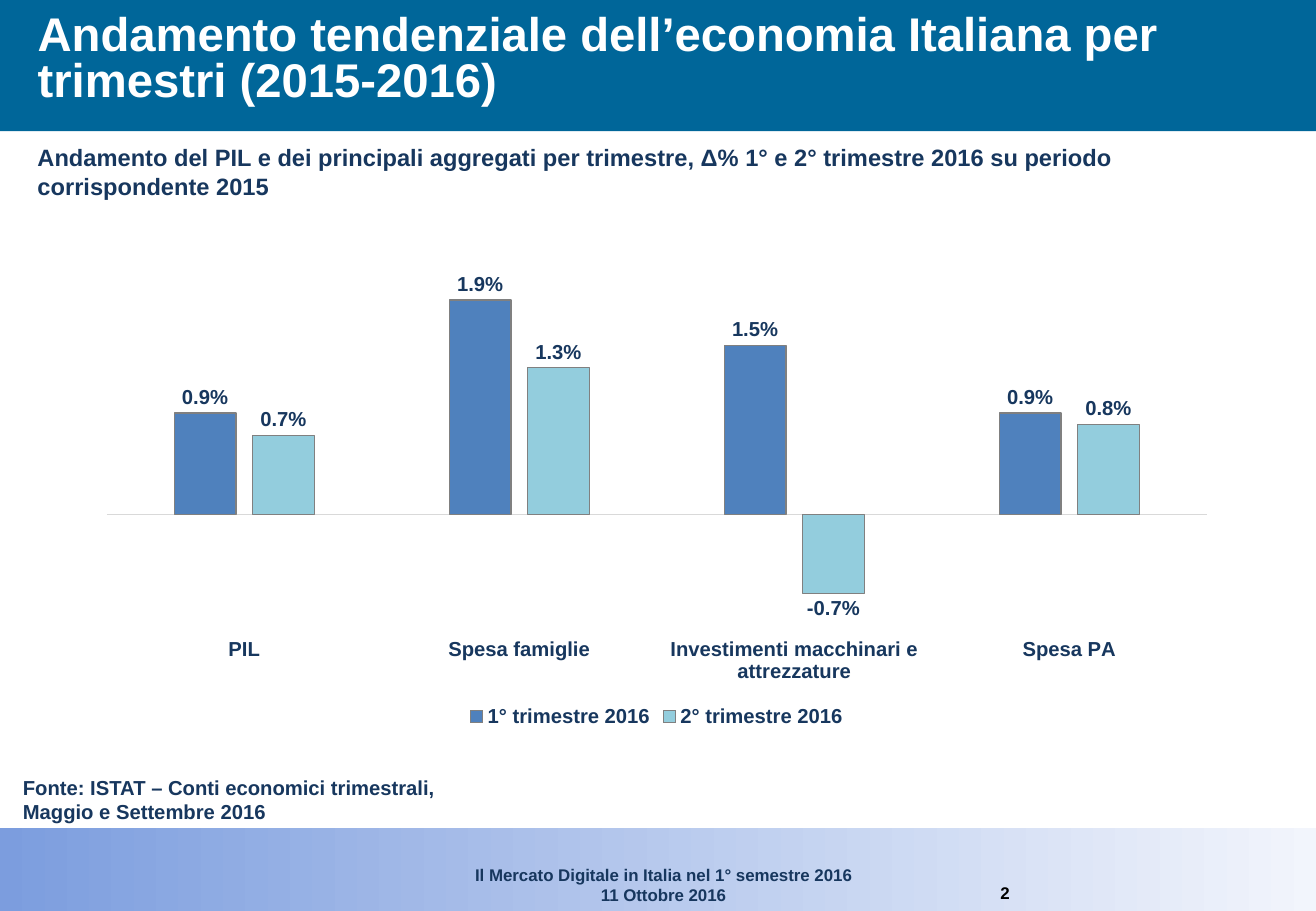
from dataclasses import dataclass

from pptx import Presentation
from pptx.chart.data import CategoryChartData
from pptx.dml.color import RGBColor
from pptx.enum.chart import (XL_CHART_TYPE, XL_LABEL_POSITION, XL_LEGEND_POSITION,
                             XL_TICK_LABEL_POSITION, XL_TICK_MARK)
from pptx.enum.shapes import MSO_SHAPE
from pptx.enum.text import MSO_ANCHOR, MSO_AUTO_SIZE, PP_ALIGN
from pptx.util import Inches, Pt


@dataclass(frozen=True)
class Theme:
    """Colours, font and type sizes of the slide."""
    font: str = "Arial"
    navy: str = "17375E"
    white: str = "FFFFFF"
    black: str = "000000"
    header: str = "006699"
    footer: tuple = ("7C9DDE", "F2F5FC")
    series: tuple = ("4F81BD", "93CDDD")
    bar_line: str = "808080"
    axis_line: str = "D9D9D9"
    title_size: int = 28
    subtitle_size: int = 14
    label_size: int = 12
    footer_size: int = 10


THEME = Theme()
WIDTH, HEIGHT = 10.83, 7.5
CATEGORIES = ["PIL", "Spesa famiglie", "Investimenti macchinari e attrezzature", "Spesa PA"]
SERIES = {
    "1° trimestre 2016": (0.009, 0.019, 0.015, 0.009),
    "2° trimestre 2016": (0.007, 0.013, -0.007, 0.008),
}


def style_font(font, size, color=THEME.navy):
    """Apply the bold slide face to a font."""
    font.name, font.size, font.bold = THEME.font, Pt(size), True
    font.color.rgb = RGBColor.from_string(color)


def style_line(line, color):
    """Give a line its colour and the common thin width."""
    line.color.rgb = RGBColor.from_string(color)
    line.width = Pt(0.75)


def write_text(shape, text, size, color=THEME.navy, align=PP_ALIGN.LEFT,
               anchor=MSO_ANCHOR.TOP, spacing=None, wrap=True):
    """Fill a shape with formatted text."""
    frame = shape.text_frame
    frame.text = text
    frame.word_wrap = wrap
    frame.auto_size = MSO_AUTO_SIZE.NONE
    frame.vertical_anchor = anchor
    for paragraph in frame.paragraphs:
        paragraph.alignment = align
        if spacing:
            paragraph.line_spacing = spacing
        for run in paragraph.runs:
            style_font(run.font, size, color)


def add_text(slide, box, text, size, **options):
    """Add a text box at the given box in inches."""
    shape = slide.shapes.add_textbox(*map(Inches, box))
    write_text(shape, text, size, **options)


def add_band(slide, box):
    """Add a full-width rectangle without outline or shadow."""
    band = slide.shapes.add_shape(MSO_SHAPE.RECTANGLE, *map(Inches, box))
    band.shadow.inherit = False
    band.line.fill.background()
    return band


def add_header(slide, box):
    """Draw the header band with the title placeholder on it."""
    left, top, width, height = box
    band = add_band(slide, box)
    band.fill.solid()
    band.fill.fore_color.rgb = RGBColor.from_string(THEME.header)
    title = slide.shapes.title
    title.element.addprevious(band.element)
    title.left, title.top = Inches(left + 0.21), Inches(top)
    title.width, title.height = Inches(width - 0.21), Inches(height - 0.08)
    write_text(title, "Andamento tendenziale dell’economia Italiana per trimestri (2015-2016)",
               THEME.title_size, color=THEME.white, anchor=MSO_ANCHOR.MIDDLE, spacing=0.8)


def add_footer(slide, box):
    """Draw the gradient footer with the event and the page number."""
    left, top, width, height = box
    band = add_band(slide, box)
    band.fill.gradient()
    band.fill.gradient_angle = 0
    for stop, color in zip(band.fill.gradient_stops, THEME.footer):
        stop.color.rgb = RGBColor.from_string(color)
    add_text(slide, (left + 2.43, top + 0.25, 6.06, 0.44),
             "Il Mercato Digitale in Italia nel 1° semestre 2016\n11 Ottobre 2016",
             THEME.footer_size, align=PP_ALIGN.CENTER)
    add_text(slide, (left + 7.97, top + 0.4, 0.6, 0.27), "2",
             THEME.footer_size, color=THEME.black, align=PP_ALIGN.CENTER)


def style_axes(chart):
    """Hide the value axis and keep category names below the bars."""
    value_axis = chart.value_axis
    value_axis.visible = False
    value_axis.has_major_gridlines = False
    value_axis.minimum_scale, value_axis.maximum_scale = -0.01, 0.025
    value_axis.tick_labels.number_format = "0.0%"
    value_axis.tick_labels.number_format_is_linked = False
    category_axis = chart.category_axis
    category_axis.tick_label_position = XL_TICK_LABEL_POSITION.LOW
    category_axis.major_tick_mark = XL_TICK_MARK.NONE
    category_axis.minor_tick_mark = XL_TICK_MARK.NONE
    style_font(category_axis.tick_labels.font, THEME.label_size)
    style_line(category_axis.format.line, THEME.axis_line)


def style_series(series, color):
    """Colour the bars of a series and label them."""
    series.invert_if_negative = False
    series.format.fill.solid()
    series.format.fill.fore_color.rgb = RGBColor.from_string(color)
    style_line(series.format.line, THEME.bar_line)
    labels = series.data_labels
    labels.show_value = True
    labels.number_format, labels.number_format_is_linked = "0.0%", False
    labels.position = XL_LABEL_POSITION.OUTSIDE_END
    style_font(labels.font, THEME.label_size)


def add_quarter_chart(slide, box):
    """Add the column chart comparing the two quarters."""
    data = CategoryChartData(number_format="0.0%")
    data.categories = CATEGORIES
    for name, values in SERIES.items():
        data.add_series(name, values)
    chart = slide.shapes.add_chart(XL_CHART_TYPE.COLUMN_CLUSTERED, *map(Inches, box), data).chart
    chart.has_title = False
    chart.font.name, chart.font.size = THEME.font, Pt(THEME.footer_size)
    chart.font.color.rgb = RGBColor.from_string(THEME.black)
    chart.has_legend = True
    chart.legend.position = XL_LEGEND_POSITION.BOTTOM
    chart.legend.include_in_layout = False
    style_font(chart.legend.font, THEME.label_size)
    style_axes(chart)
    plot = chart.plots[0]
    plot.vary_by_categories = False
    plot.gap_width, plot.overlap = 219, -27
    for series, color in zip(plot.series, THEME.series):
        style_series(series, color)


def add_body(slide, box):
    """Place the subtitle, the chart and its source."""
    left, top, width, height = box
    add_text(slide, (left + 0.21, top + 0.05, width - 0.51, 0.57),
             "Andamento del PIL e dei principali aggregati per trimestre, "
             "Δ% 1° e 2° trimestre 2016 su periodo corrispondente 2015", THEME.subtitle_size)
    add_quarter_chart(slide, (left + 0.69, top + 0.75, width - 1.4, 4.2))
    add_text(slide, (left + 0.09, top + height - 0.49, 3.63, 0.5),
             "Fonte: ISTAT – Conti economici trimestrali,\vMaggio e Settembre 2016",
             THEME.label_size, wrap=False)


def main():
    """Build and save the slide."""
    presentation = Presentation()
    presentation.slide_width, presentation.slide_height = Inches(WIDTH), Inches(HEIGHT)
    slide = presentation.slides.add_slide(presentation.slide_layouts[5])
    header_height, footer_height = 1.08, 0.68
    footer_top = HEIGHT - footer_height
    add_header(slide, (0, 0, WIDTH, header_height))
    add_footer(slide, (0, footer_top, WIDTH, footer_height))
    add_body(slide, (0, header_height, WIDTH, footer_top - header_height))
    presentation.save("out.pptx")


if __name__ == "__main__":
    main()
